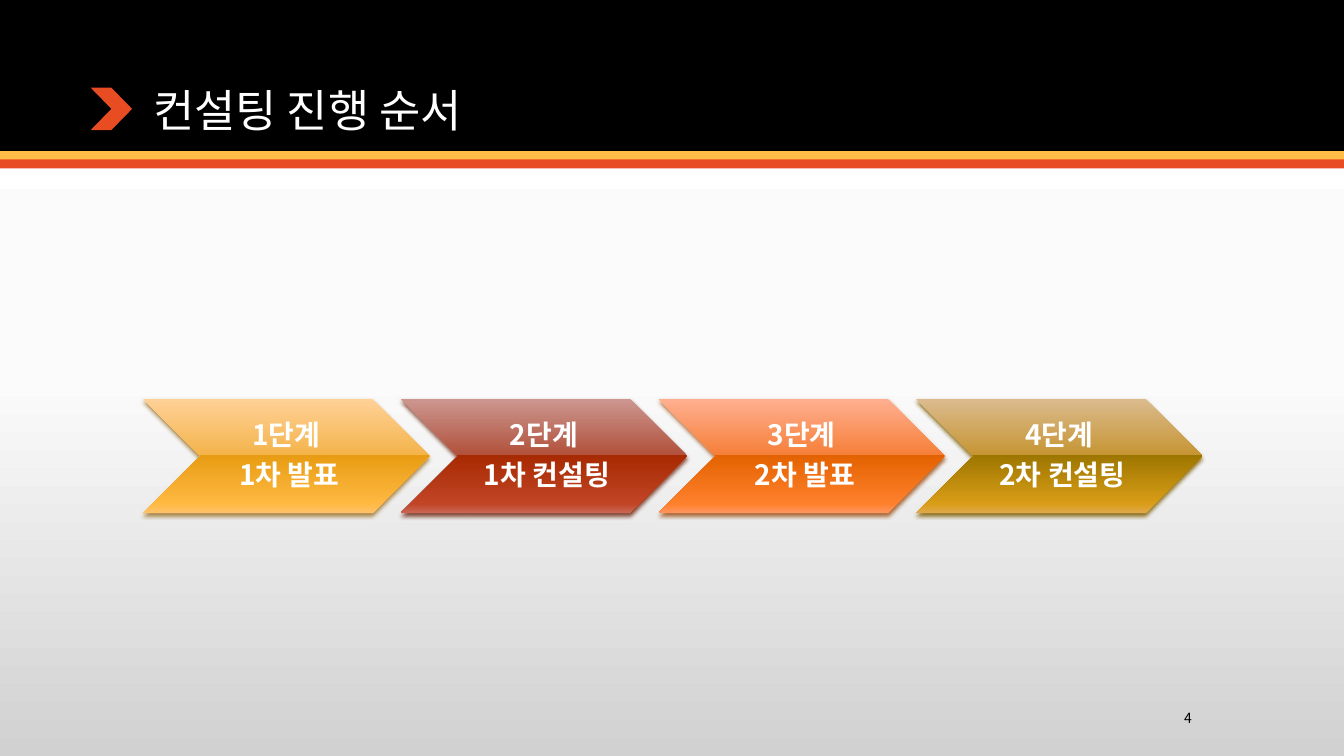
from dataclasses import dataclass

from lxml import etree
from pptx import Presentation
from pptx.dml.color import RGBColor
from pptx.dml.fill import FillFormat
from pptx.enum.shapes import MSO_SHAPE
from pptx.enum.text import MSO_ANCHOR, MSO_AUTO_SIZE, PP_ALIGN
from pptx.oxml.ns import qn
from pptx.oxml.xmlchemy import BaseOxmlElement
from pptx.shapes.autoshape import Shape
from pptx.slide import Slide
from pptx.text.text import TextFrame, _Paragraph
from pptx.util import Inches, Pt

RECTANGLE, CHEVRON = MSO_SHAPE.RECTANGLE, MSO_SHAPE.CHEVRON
LEFT, CENTER, RIGHT = PP_ALIGN.LEFT, PP_ALIGN.CENTER, PP_ALIGN.RIGHT
MIDDLE, BOTTOM = MSO_ANCHOR.MIDDLE, MSO_ANCHOR.BOTTOM
NO_AUTOFIT = MSO_AUTO_SIZE.NONE

FONT = "Noto Sans CJK KR"
COLORS = {"black": "000000", "white": "FFFFFF", "amber": "FFBD47", "red": "E84C22"}
PAGE_STOPS = ((0, "FFFFFF"), (50, "FBFBFB"), (100, "D1D1D1"))
GLOSS_POSITIONS = (0, 49, 49, 92, 100)
STEP_LEFT, STEP_TOP, STEP_WIDTH, STEP_HEIGHT = 1.42, 3.96, 2.84, 1.13
STEP_PITCH = STEP_WIDTH * 0.9


@dataclass(frozen=True)
class Block:
    kind: MSO_SHAPE
    left: float
    top: float
    width: float
    height: float
    color: str


@dataclass(frozen=True)
class Step:
    lines: tuple[str, str]
    gloss: tuple[str, ...]
    shadow: str


HEADER = (
    Block(RECTANGLE, 0, 0, 13.33, 1.5, "black"),
    Block(RECTANGLE, 0, 1.5, 13.33, 0.09, "amber"),
    Block(RECTANGLE, 0, 1.58, 13.33, 0.09, "red"),
    Block(CHEVRON, 0.9, 0.87, 0.41, 0.42, "red"),
)
STEPS = (
    Step(("1단계 ", "1차 발표"), ("FFD197", "F4B44C", "E89C13", "FFB942", "FFC36A"), "9D752C"),
    Step(("2단계 ", "1차 컨설팅"), ("CC9790", "B1513C", "A82A02", "C14526", "C96654"), "702D17"),
    Step(("3단계 ", "2차 발표"), ("FFAF90", "F57F39", "E36200", "FF802C", "FF945E"), "9D5218"),
    Step(("4단계 ", "2차 컨설팅"), ("DBBB8E", "C69534", "9D7600", "D99D17", "DFA94C"), "7E5E00"),
)


def set_gradient(fill: FillFormat, owner: BaseOxmlElement, stops: tuple) -> None:
    """Give a fill a top-to-bottom gradient with the listed stops."""
    fill.gradient()
    fill.gradient_angle = 270
    stop_list = next(owner.iter(qn("a:gsLst")))
    for stop in list(stop_list):
        stop_list.remove(stop)
    for position, color in stops:
        stop = etree.SubElement(stop_list, qn("a:gs"), pos=str(position * 1000))
        etree.SubElement(stop, qn("a:srgbClr"), val=color)


def add_shadow(shape: Shape, color: str) -> None:
    """Add a soft shadow just below a shape."""
    shape.shadow.inherit = False
    effects = shape._element.spPr.find(qn("a:effectLst"))
    shadow = etree.SubElement(
        effects, qn("a:outerShdw"), blurRad=str(Pt(3.1)), dist=str(Pt(2)),
        dir="5400000", algn="ctr", rotWithShape="0")
    tint = etree.SubElement(shadow, qn("a:srgbClr"), val=color)
    etree.SubElement(tint, qn("a:alpha"), val="83000")


def add_span(para: _Paragraph, text: str, size: int, color: str, bold: bool = False) -> None:
    """Add one formatted run to a paragraph."""
    span = para.add_run()
    span.text = text
    span.font.size = Pt(size)
    span.font.bold = bold
    span.font.color.rgb = RGBColor.from_string(COLORS[color])
    span.font.name = FONT
    etree.SubElement(span.font._element, qn("a:ea"), typeface=FONT)


def set_frame(frame: TextFrame, anchor: MSO_ANCHOR) -> None:
    """Set wrapping, fitting and the vertical anchor of a text frame."""
    frame.word_wrap = True
    frame.auto_size = NO_AUTOFIT
    frame.vertical_anchor = anchor


def add_block(page: Slide, block: Block) -> None:
    """Draw one flat shape of the header."""
    box = page.shapes.add_shape(
        block.kind, Inches(block.left), Inches(block.top),
        Inches(block.width), Inches(block.height))
    box.shadow.inherit = False
    box.fill.solid()
    box.fill.fore_color.rgb = RGBColor.from_string(COLORS[block.color])
    box.line.fill.background()


def place_title(page: Slide, text: str) -> None:
    """Move the title placeholder onto the header and fill it."""
    title = page.shapes.title
    page.shapes._spTree.append(title._element)
    title.left, title.top = Inches(1.42), Inches(0.28)
    title.width, title.height = Inches(10.5), Inches(1.13)
    set_frame(title.text_frame, BOTTOM)
    para = title.text_frame.paragraphs[0]
    para.alignment = LEFT
    para.line_spacing = 0.9
    add_span(para, text, 32, "white")


def add_step(page: Slide, index: int, step: Step) -> None:
    """Draw one glossy chevron with its two lines of text."""
    box = page.shapes.add_shape(
        CHEVRON, Inches(STEP_LEFT + index * STEP_PITCH), Inches(STEP_TOP),
        Inches(STEP_WIDTH), Inches(STEP_HEIGHT))
    set_gradient(box.fill, box._element, tuple(zip(GLOSS_POSITIONS, step.gloss)))
    box.line.fill.background()
    add_shadow(box, step.shadow)
    frame = box.text_frame
    set_frame(frame, MIDDLE)
    frame.margin_left = Inches(0.09)
    frame.margin_top = frame.margin_right = frame.margin_bottom = Inches(0.03)
    for number, line in enumerate(step.lines):
        para = frame.add_paragraph() if number else frame.paragraphs[0]
        para.alignment = CENTER
        para.line_spacing = 0.9
        space = etree.SubElement(para._p.get_or_add_pPr(), qn("a:spcAft"))
        etree.SubElement(space, qn("a:spcPct"), val="35000")
        add_span(para, line, 20, "white", bold=True)


def add_page_number(page: Slide, number: str) -> None:
    """Write the page number at the bottom right."""
    box = page.shapes.add_textbox(Inches(10.42), Inches(6.97), Inches(1.5), Inches(0.3))
    set_frame(box.text_frame, MIDDLE)
    para = box.text_frame.paragraphs[0]
    para.alignment = RIGHT
    add_span(para, number, 10, "black")


def main() -> None:
    """Build the slide and save the deck."""
    deck = Presentation()
    deck.slide_width, deck.slide_height = Inches(13.33), Inches(7.5)
    page = deck.slides.add_slide(deck.slide_layouts[5])
    set_gradient(page.background.fill, page._element, PAGE_STOPS)
    for block in HEADER:
        add_block(page, block)
    place_title(page, "컨설팅 진행 순서")
    for index, step in enumerate(STEPS):
        add_step(page, index, step)
    add_page_number(page, "4")
    deck.save("out.pptx")


if __name__ == "__main__":
    main()
